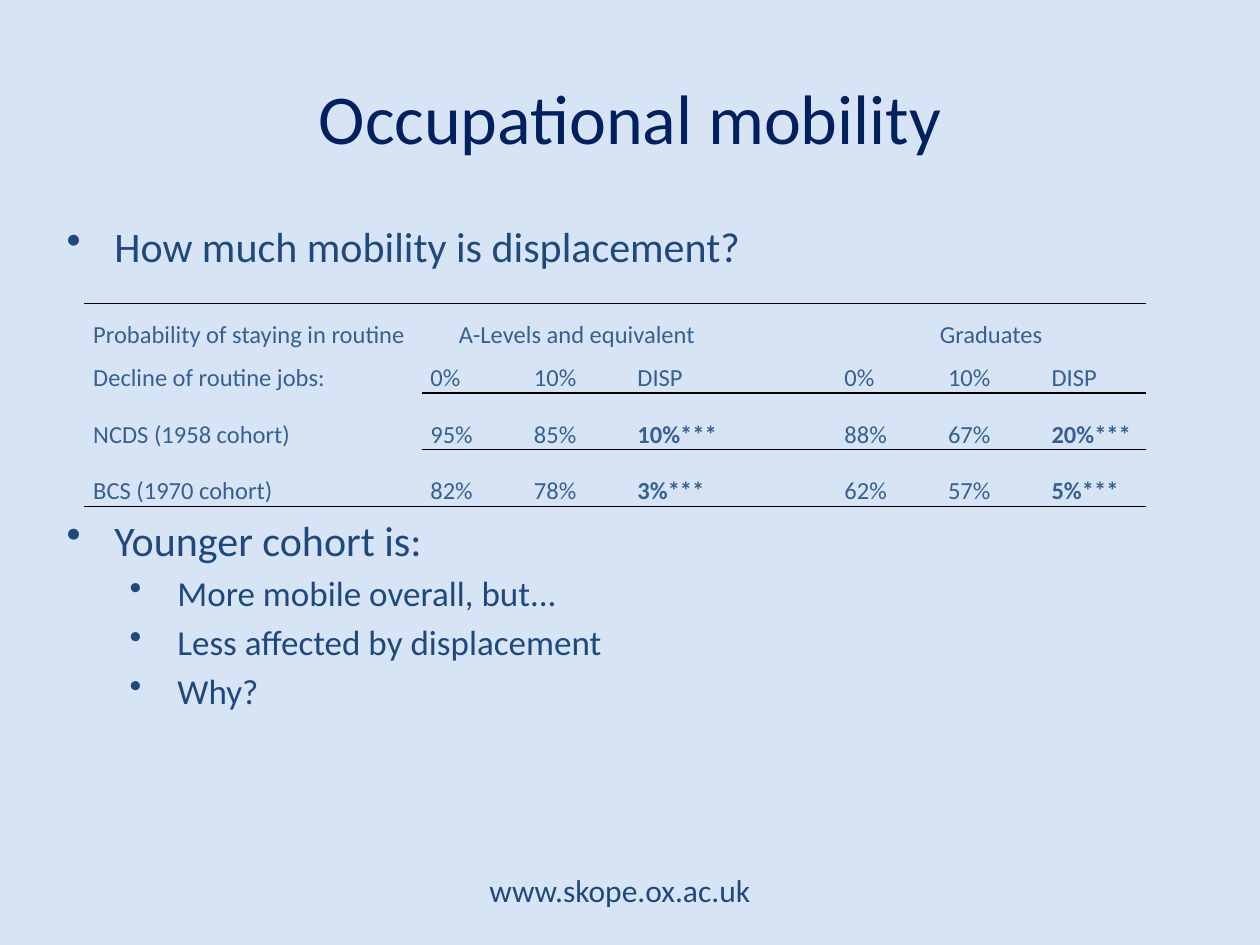
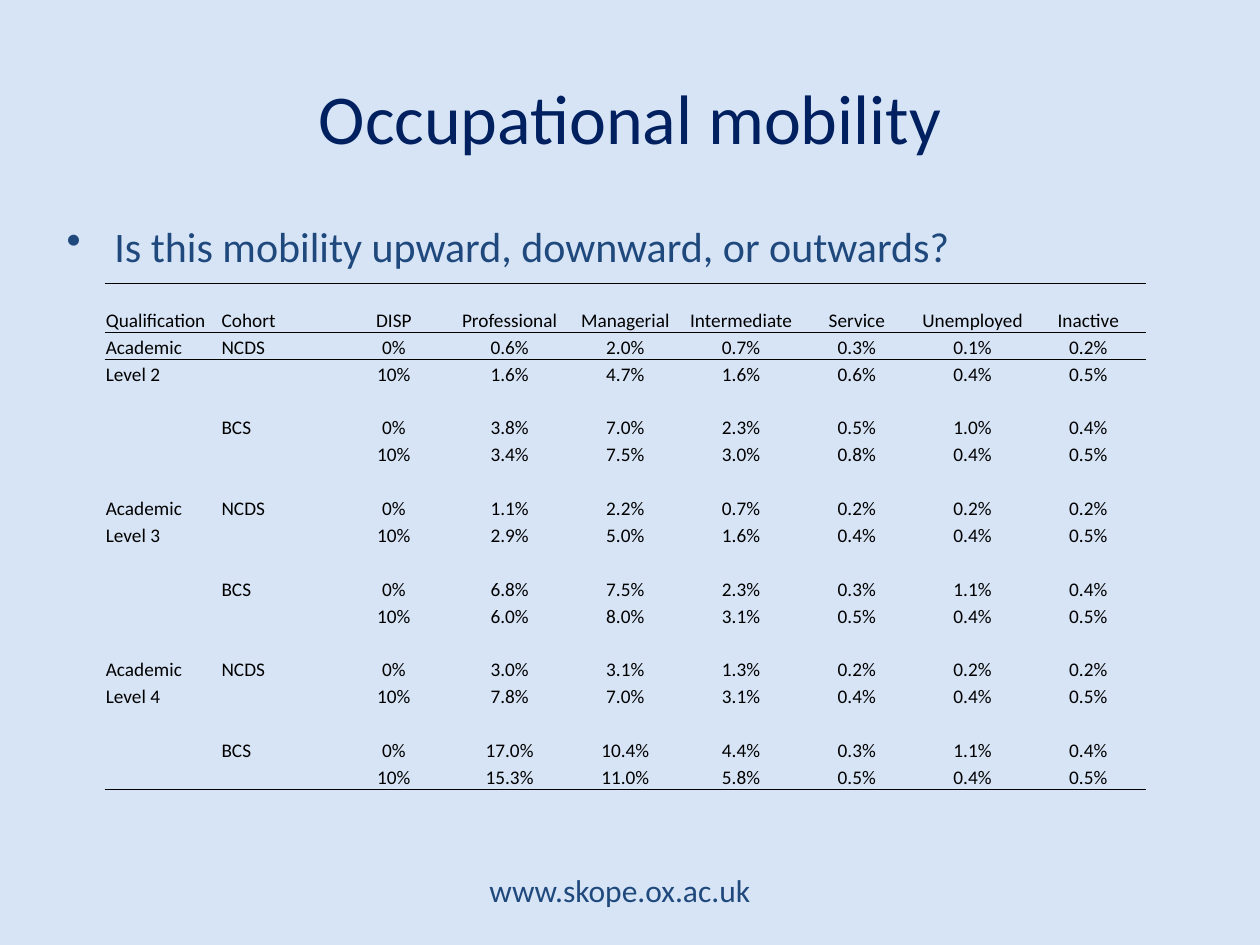
from lxml.etree import SubElement
from pptx import Presentation
from pptx.dml.color import RGBColor
from pptx.enum.text import MSO_ANCHOR, PP_ALIGN
from pptx.oxml.ns import qn
from pptx.util import Inches, Pt

BACKGROUND = RGBColor(0xD7, 0xE4, 0xF5)
TITLE_COLOR = RGBColor(0x00, 0x20, 0x60)
BODY_COLOR = RGBColor(0x1F, 0x49, 0x7D)
TABLE_COLOR = RGBColor(0x37, 0x60, 0x92)
BLACK = RGBColor(0, 0, 0)
FONT = "Calibri"
NO_STYLE = "{2D5ABB26-0587-4C30-8999-92F81FD0307C}"

SLIDE_WIDTH, SLIDE_HEIGHT = Inches(10), Inches(7.5)

# Left, top, width and height in percent of the slide
TITLE_BOX = (5, 4, 90, 16.67)
BODY_BOX = (4.3, 22.67, 90, 66)
FOOTER_BOX = (32, 91.47, 34.4, 5.33)
STAYING_BOX = (6.7, 32.13, 84.3, 21.47)
DESTINATION_BOX = (8.3, 30, 82.7, 53.6)

STAYING_ROWS = [
    ["Probability of staying in routine", "A-Levels and equivalent", "", "", "", "Graduates", "", ""],
    ["Decline of routine jobs:", "0%", "10%", "DISP", "", "0%", "10%", "DISP"],
    ["NCDS (1958 cohort)", "95%", "85%", "10%***", "", "88%", "67%", "20%***"],
    ["BCS (1970 cohort)", "82%", "78%", "3%***", "", "62%", "57%", "5%***"],
]
DESTINATION_HEADER = ["Qualification", "Cohort", "DISP", "Professional", "Managerial",
                      "Intermediate", "Service", "Unemployed", "Inactive"]
# Level, then for each cohort the shares at 0% and at 10% displacement
DESTINATIONS = {
    "Level 2": {
        "NCDS": [(0.6, 2.0, 0.7, 0.3, 0.1, 0.2), (1.6, 4.7, 1.6, 0.6, 0.4, 0.5)],
        "BCS": [(3.8, 7.0, 2.3, 0.5, 1.0, 0.4), (3.4, 7.5, 3.0, 0.8, 0.4, 0.5)],
    },
    "Level 3": {
        "NCDS": [(1.1, 2.2, 0.7, 0.2, 0.2, 0.2), (2.9, 5.0, 1.6, 0.4, 0.4, 0.5)],
        "BCS": [(6.8, 7.5, 2.3, 0.3, 1.1, 0.4), (6.0, 8.0, 3.1, 0.5, 0.4, 0.5)],
    },
    "Level 4": {
        "NCDS": [(3.0, 3.1, 1.3, 0.2, 0.2, 0.2), (7.8, 7.0, 3.1, 0.4, 0.4, 0.5)],
        "BCS": [(17.0, 10.4, 4.4, 0.3, 1.1, 0.4), (15.3, 11.0, 5.8, 0.5, 0.4, 0.5)],
    },
}


def place(box):
    left, top, width, height = box
    return [round(share * side / 100) for share, side in
            ((left, SLIDE_WIDTH), (top, SLIDE_HEIGHT), (width, SLIDE_WIDTH), (height, SLIDE_HEIGHT))]


def style_runs(paragraph, size, color, bold=False):
    for run in paragraph.runs:
        run.font.name = FONT
        run.font.size = Pt(size)
        run.font.color.rgb = color
        run.font.bold = bold


def add_text_frame(slide, box, anchor):
    text_frame = slide.shapes.add_textbox(*place(box)).text_frame
    text_frame.word_wrap = True
    text_frame.vertical_anchor = anchor
    return text_frame


def add_centered_line(slide, box, text, size, color):
    text_frame = add_text_frame(slide, box, MSO_ANCHOR.MIDDLE)
    text_frame.text = text
    paragraph = text_frame.paragraphs[0]
    paragraph.alignment = PP_ALIGN.CENTER
    style_runs(paragraph, size, color)


def add_bullets(slide, box, bullets):
    """Each bullet is (text, level, space before in points)."""
    text_frame = add_text_frame(slide, box, MSO_ANCHOR.TOP)
    for index, (text, level, space_before) in enumerate(bullets):
        paragraph = text_frame.add_paragraph() if index else text_frame.paragraphs[0]
        paragraph.text = text
        paragraph.level = level
        if space_before:
            paragraph.space_before = Pt(space_before)
        properties = paragraph._p.get_or_add_pPr()
        properties.set("marL", str(Inches(0.38 + 0.5 * level)))
        properties.set("indent", str(Inches(-0.38)))
        SubElement(properties, qn("a:buChar")).set("char", "•")
        style_runs(paragraph, 24 - 4 * level, BODY_COLOR)


def add_border(cell, side, width):
    line = SubElement(cell._tc.get_or_add_tcPr(), qn(f"a:ln{side}"), w=str(Pt(width)))
    fill = SubElement(line, qn("a:solidFill"))
    SubElement(fill, qn("a:srgbClr"), val=str(BLACK))


def add_plain_table(slide, box, rows, column_weights, row_weights, margins, size, color, borders):
    """borders(row, column) gives the (side, width) pairs of a cell, top before bottom."""
    left, top, width, height = place(box)
    frame = slide.shapes.add_table(len(rows), len(rows[0]), left, top, width, height)
    table = frame.table
    table.first_row = table.horz_banding = False
    next(frame.element.iter(qn("a:tableStyleId"))).text = NO_STYLE
    for column, weight in zip(table.columns, column_weights):
        column.width = round(width * weight / sum(column_weights))
    for row, weight in zip(table.rows, row_weights):
        row.height = round(height * weight / sum(row_weights))
    for row_index, texts in enumerate(rows):
        for column_index, text in enumerate(texts):
            cell = table.cell(row_index, column_index)
            (cell.margin_left, cell.margin_top,
             cell.margin_right, cell.margin_bottom) = map(Inches, margins)
            cell.vertical_anchor = MSO_ANCHOR.BOTTOM
            for side, line_width in borders(row_index, column_index):
                add_border(cell, side, line_width)
            cell.fill.background()
            paragraph = cell.text_frame.paragraphs[0]
            if text:
                paragraph.text = text
                style_runs(paragraph, size, color, bold=text.endswith("***"))
            else:
                SubElement(paragraph._p, qn("a:endParaRPr"), sz=str(size * 100))
    return table


def add_staying_table(slide, box):
    last_row = len(STAYING_ROWS) - 1

    def borders(row, column):
        if row == 0:
            yield "T", 1
        if row == 2 and column:
            yield "T", 1
        if row == last_row or (row == 1 and column):
            yield "B", 1

    table = add_plain_table(slide, box, STAYING_ROWS, [2.67] + [0.82] * 7, [0.37, 0.34, 0.45, 0.45],
                            (0.07, 0, 0.07, 0), 14, TABLE_COLOR, borders)
    for cell in table.iter_cells():
        cell.text_frame.paragraphs[0].line_spacing = 1.15
    for first in (1, 5):
        heading = table.cell(0, first)
        heading.merge(table.cell(0, first + 2))
        heading.text_frame.paragraphs[0].alignment = PP_ALIGN.CENTER


def destination_rows():
    rows = [DESTINATION_HEADER]
    for level, cohorts in DESTINATIONS.items():
        for cohort, (without, displaced) in cohorts.items():
            if len(rows) > 1:
                rows.append([""] * len(DESTINATION_HEADER))
            labels = ("Academic", level) if cohort == "NCDS" else ("", "")
            rows.append([labels[0], cohort, "0%"] + [f"{value:.1f}%" for value in without])
            rows.append([labels[1], "", "10%"] + [f"{value:.1f}%" for value in displaced])
    return rows


def add_destination_table(slide, box):
    rows = destination_rows()

    def borders(row, column):
        if row == 0:
            yield "T", 1
        if row == 1:
            yield "T", 0.75
        if row in (0, len(rows) - 1):
            yield "B", 0.75

    table = add_plain_table(slide, box, rows, [1] * len(DESTINATION_HEADER),
                            [1.83] + [1] * (len(rows) - 1),
                            (0.01, 0.01, 0.01, 0), 11, BLACK, borders)
    for row in table.rows:
        for cell in list(row.cells)[2:]:
            cell.text_frame.paragraphs[0].alignment = PP_ALIGN.CENTER


def add_mobility_slide(presentation, bullets, add_table, table_box):
    slide = presentation.slides.add_slide(presentation.slide_layouts[6])
    slide.background.fill.solid()
    slide.background.fill.fore_color.rgb = BACKGROUND
    add_centered_line(slide, FOOTER_BOX, "www.skope.ox.ac.uk", 18, BODY_COLOR)
    add_bullets(slide, BODY_BOX, bullets)
    add_centered_line(slide, TITLE_BOX, "Occupational mobility", 40, TITLE_COLOR)
    add_table(slide, table_box)


def main():
    presentation = Presentation()
    presentation.slide_width, presentation.slide_height = SLIDE_WIDTH, SLIDE_HEIGHT
    add_mobility_slide(presentation, [
        ("How much mobility is displacement?", 0, 0),
        ("Younger cohort is:", 0, 139),
        ("More mobile overall, but...", 1, 4),
        ("Less affected by displacement", 1, 4),
        ("Why?", 1, 4),
    ], add_staying_table, STAYING_BOX)
    add_mobility_slide(presentation, [
        ("Is this mobility upward, downward, or outwards?", 0, 0),
    ], add_destination_table, DESTINATION_BOX)
    presentation.save("out.pptx")


if __name__ == "__main__":
    main()
